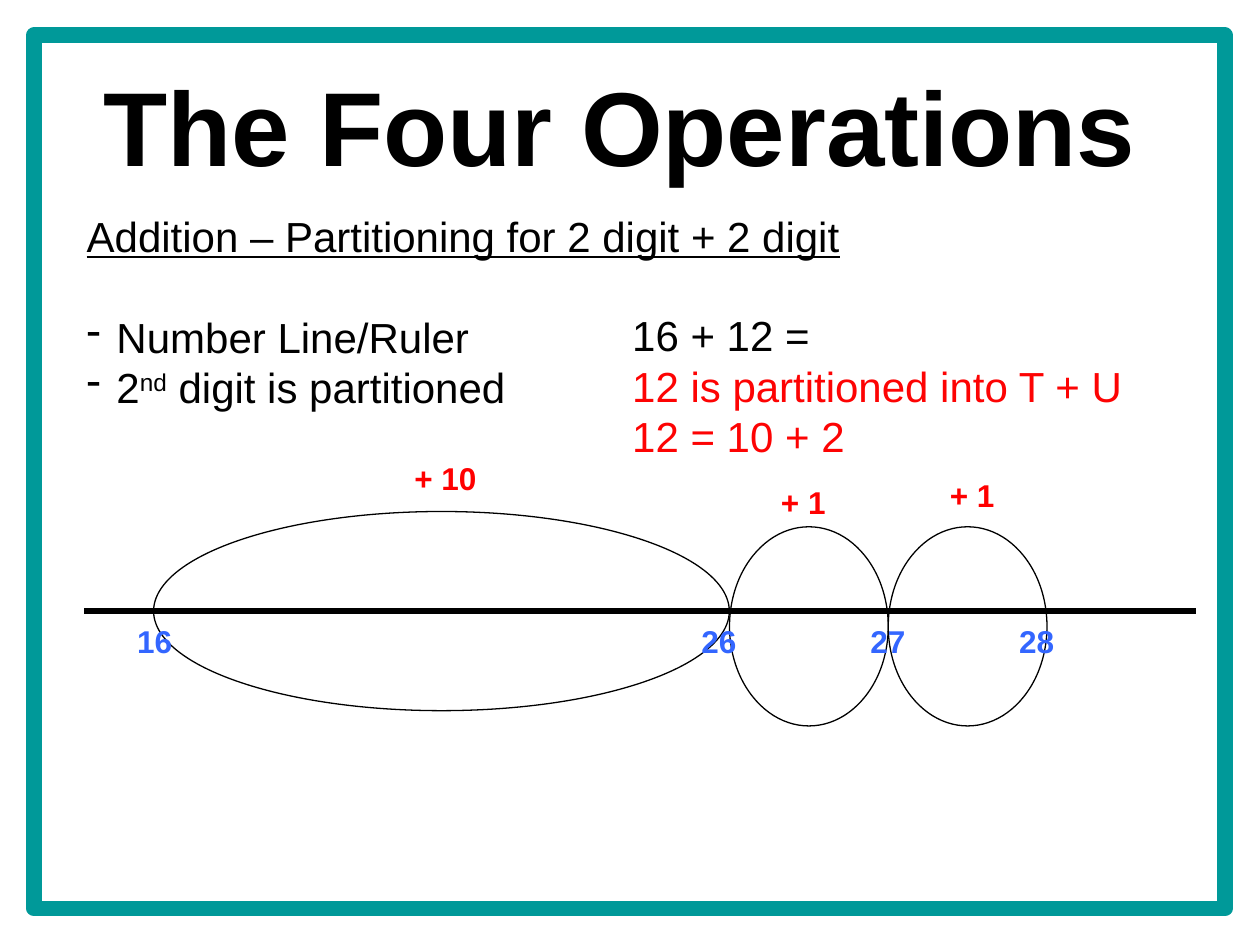
from dataclasses import dataclass

from lxml.etree import SubElement
from pptx import Presentation
from pptx.dml.color import RGBColor
from pptx.enum.shapes import MSO_CONNECTOR, MSO_SHAPE
from pptx.enum.text import MSO_ANCHOR, PP_ALIGN
from pptx.oxml.ns import qn
from pptx.util import Pt

BLACK = RGBColor(0x00, 0x00, 0x00)
TEAL = RGBColor(0x00, 0x99, 0x99)
BLUE = RGBColor(0x33, 0x66, 0xFF)
RED = RGBColor(0xFF, 0x00, 0x00)
WORKING_RED = RGBColor(0xFD, 0x03, 0x03)

FONT = "Arial"
LINE_Y = 349.2
NUMBER_TOP = 352.1
LABEL_HEIGHT = 28.8
LABEL_WIDTH = 45.4


@dataclass
class Jump:
    """One hop along the number line, with its label above."""
    left: float
    top: float
    width: float
    label: str
    label_left: float
    label_top: float
    label_width: float = LABEL_WIDTH


@dataclass
class Mark:
    number: str
    left: float


JUMPS = [
    Jump(87.8, 292.3, 329, "+ 10", 229.7, 258.5, 62.6),
    Jump(416.9, 301, 90.7, "+ 1", 439.2, 272.2),
    Jump(507.6, 301, 90.7, "+ 1", 535.7, 268.6),
]
MARKS = [Mark("16", 71.3), Mark("26", 393.8), Mark("27", 490.3), Mark("28", 575.3)]


def add_box(page, left: float, top: float, width: float, height: float, anchor=MSO_ANCHOR.TOP):
    frame = page.shapes.add_textbox(Pt(left), Pt(top), Pt(width), Pt(height)).text_frame
    frame.word_wrap = True
    frame.vertical_anchor = anchor
    return frame


def add_text(para, text: str, *, size: float = 24, color: RGBColor = BLACK, bold: bool = False,
             underline: bool = False, superscript: bool = False) -> None:
    span = para.add_run()
    span.text = text
    font = span.font
    font.name, font.size, font.bold, font.underline = FONT, Pt(size), bold, underline
    font.color.rgb = color
    if superscript:
        span._r.get_or_add_rPr().set("baseline", "30000")


def add_dash(para) -> None:
    """Give the paragraph a hanging dash bullet."""
    properties = para._p.get_or_add_pPr()
    properties.set("marL", str(Pt(17)))
    properties.set("indent", str(-Pt(17)))
    SubElement(properties, qn("a:buChar"), char="-")


def add_outline(page, kind, left: float, top: float, width: float, height: float,
                color: RGBColor, weight: float) -> None:
    shape = page.shapes.add_shape(kind, Pt(left), Pt(top), Pt(width), Pt(height))
    shape.shadow.inherit = False
    shape.fill.background()
    shape.line.color.rgb = color
    shape.line.width = Pt(weight)


def add_number_line(page) -> None:
    line = page.shapes.add_connector(MSO_CONNECTOR.STRAIGHT, Pt(48.3), Pt(LINE_Y), Pt(683.3), Pt(LINE_Y))
    line.line.color.rgb = BLACK
    line.line.width = Pt(3)
    SubElement(line._element.spPr, qn("a:effectLst"))


def add_label(page, text: str, left: float, top: float, width: float, color: RGBColor) -> None:
    box = add_box(page, left, top, width, LABEL_HEIGHT)
    add_text(box.paragraphs[0], text, size=18, color=color, bold=True)


def add_title(page) -> None:
    para = add_box(page, 36.7, 31.7, 635, 79.2, MSO_ANCHOR.MIDDLE).paragraphs[0]
    para.alignment = PP_ALIGN.CENTER
    para.space_before = Pt(10)
    add_text(para, "The Four Operations", size=60, bold=True)


def add_method(page) -> None:
    box = add_box(page, 42.5, 116.6, 629.3, 181.4)
    add_text(box.paragraphs[0], "Addition – Partitioning for 2 digit + 2 digit", underline=True)
    ruler = box.add_paragraph()
    ruler.space_before = Pt(29)
    add_dash(ruler)
    add_text(ruler, "Number Line/Ruler")
    digit = box.add_paragraph()
    add_dash(digit)
    add_text(digit, "2")
    add_text(digit, "nd", superscript=True)
    add_text(digit, " digit is partitioned")


def add_working(page) -> None:
    box = add_box(page, 354.2, 173.5, 317.5, 94.3)
    add_text(box.paragraphs[0], "16 + 12 =")
    for text in ("12 is partitioned into T + U", "12 = 10 + 2"):
        add_text(box.add_paragraph(), text, color=WORKING_RED)


def main() -> None:
    deck = Presentation()
    deck.slide_width, deck.slide_height = Pt(720), Pt(540)
    page = deck.slides.add_slide(deck.slide_layouts[6])
    add_outline(page, MSO_SHAPE.RECTANGLE, 19.5, 20.2, 680.4, 499, TEAL, 9)
    add_title(page)
    add_method(page)
    add_number_line(page)
    add_working(page)
    for jump in JUMPS:
        add_outline(page, MSO_SHAPE.OVAL, jump.left, jump.top, jump.width, 113.8, BLACK, 0.75)
    for mark in MARKS:
        add_label(page, mark.number, mark.left, NUMBER_TOP, LABEL_WIDTH, BLUE)
    for jump in JUMPS:
        add_label(page, jump.label, jump.label_left, jump.label_top, jump.label_width, RED)
    deck.save("out.pptx")


if __name__ == "__main__":
    main()
